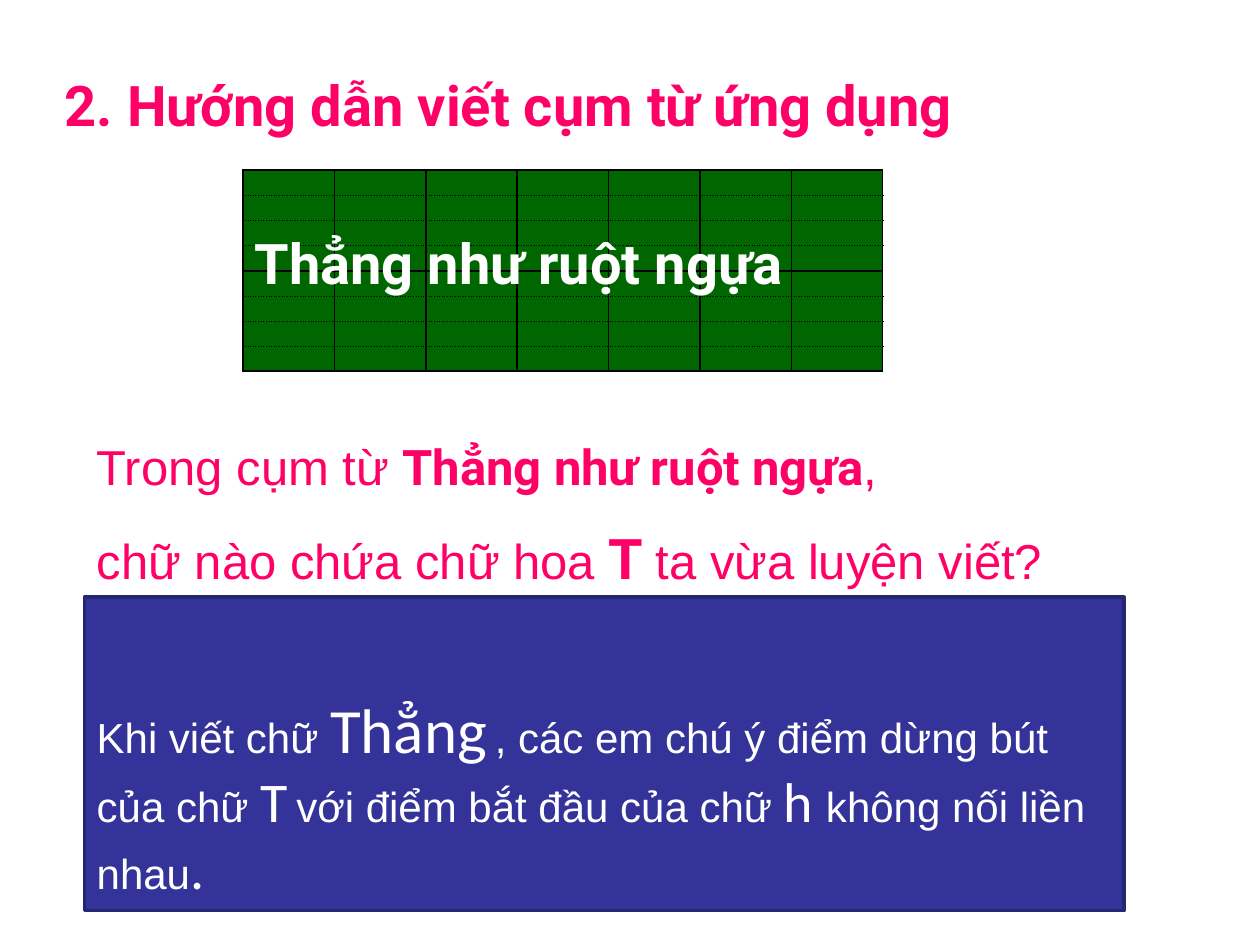
from dataclasses import dataclass

from lxml import etree
from pptx import Presentation
from pptx.dml.color import RGBColor
from pptx.enum.shapes import MSO_SHAPE
from pptx.enum.text import MSO_ANCHOR, PP_ALIGN
from pptx.oxml.ns import qn
from pptx.slide import Slide
from pptx.table import _Cell
from pptx.text.text import TextFrame
from pptx.util import Cm, Length, Pt

SCROLL = MSO_SHAPE.HORIZONTAL_SCROLL
RECTANGLE = MSO_SHAPE.RECTANGLE
TOP, MIDDLE, BOTTOM = MSO_ANCHOR.TOP, MSO_ANCHOR.MIDDLE, MSO_ANCHOR.BOTTOM
LEFT, CENTER = PP_ALIGN.LEFT, PP_ALIGN.CENTER

PINK = RGBColor(0xFF, 0x00, 0x66)
WHITE = RGBColor(0xFF, 0xFF, 0xFF)
BLACK = RGBColor(0x00, 0x00, 0x00)
GREEN = RGBColor(0x00, 0x66, 0x00)
BLUE = RGBColor(0x33, 0x33, 0x99)
NAVY = RGBColor(0x26, 0x26, 0x71)

GRID_ROWS, GRID_COLUMNS, ROWS_PER_BAND = 8, 7, 4
PHRASE = "Thẳng như ruột ngựa"


@dataclass(frozen=True)
class Box:
    left: float
    top: float
    width: float
    height: float

    def lengths(self) -> tuple[Length, ...]:
        return Cm(self.left), Cm(self.top), Cm(self.width), Cm(self.height)


@dataclass(frozen=True)
class Words:
    text: str
    size: float
    font: str = "Arial"
    color: RGBColor = WHITE
    bold: bool = False


@dataclass(frozen=True)
class Edge:
    tag: str
    width: float
    dash: str = "solid"


def write(frame: TextFrame, lines: list[list[Words]], align: PP_ALIGN = LEFT,
          anchor: MSO_ANCHOR = TOP, gap: float = 0, bottom: float = 0.13) -> None:
    layout = {
        "word_wrap": True,
        "vertical_anchor": anchor,
        "margin_left": Cm(0.25),
        "margin_right": Cm(0.25),
        "margin_top": Cm(0.13),
        "margin_bottom": Cm(bottom),
    }
    for key, value in layout.items():
        setattr(frame, key, value)
    for index, line in enumerate(lines):
        paragraph = frame.add_paragraph() if index else frame.paragraphs[0]
        paragraph.alignment = align
        paragraph.space_before = Pt(gap if index else 0)
        for words in line:
            run = paragraph.add_run()
            run.text = words.text
            run.font.color.rgb = words.color
            style = {"size": Pt(words.size), "name": words.font, "bold": words.bold}
            for key, value in style.items():
                setattr(run.font, key, value)


def draw_edge(cell: _Cell, edge: Edge) -> None:
    properties = cell._tc.get_or_add_tcPr()
    line = etree.SubElement(properties, qn(f"a:{edge.tag}"), w=str(Pt(edge.width)))
    fill = etree.SubElement(line, qn("a:solidFill"))
    etree.SubElement(fill, qn("a:srgbClr"), val=str(BLACK))
    etree.SubElement(line, qn("a:prstDash"), val=edge.dash)


def horizontal_edge(tag: str, boundary: int) -> Edge:
    if boundary % ROWS_PER_BAND == 0:
        return Edge(tag, 1.5)
    return Edge(tag, 0.5, "sysDot")


def draw_writing_grid(slide: Slide, box: Box) -> None:
    grid = slide.shapes.add_table(GRID_ROWS, GRID_COLUMNS, *box.lengths()).table
    grid.first_row = grid.horz_banding = False
    for column in grid.columns:
        column.width = Cm(box.width / GRID_COLUMNS)
    for index, row in enumerate(grid.rows):
        row.height = Cm(box.height / GRID_ROWS)
        edges = [
            Edge("lnL", 1),
            Edge("lnR", 1),
            horizontal_edge("lnT", index),
            horizontal_edge("lnB", index + 1),
        ]
        for cell in row.cells:
            for side in ("left", "right", "top", "bottom"):
                setattr(cell, f"margin_{side}", 0)
            for edge in edges:
                draw_edge(cell, edge)
            cell.fill.solid()
            cell.fill.fore_color.rgb = GREEN
            empty = cell.text_frame.paragraphs[0]._p
            etree.SubElement(empty, qn("a:endParaRPr"), sz="800")


def main() -> None:
    presentation = Presentation()
    presentation.slide_width, presentation.slide_height = Cm(25.4), Cm(19.05)
    slide = presentation.slides.add_slide(presentation.slide_layouts[5])

    heading = slide.shapes.title
    heading.left, heading.top, heading.width, heading.height = Box(0, 1.3, 20.52, 1.63).lengths()
    write(heading.text_frame,
          [[Words("2. Hướng dẫn viết cụm từ ứng dụng", 32, "Roboto", PINK, True)]], CENTER)

    draw_writing_grid(slide, Box(4.9, 3.43, 12.9, 4.06))

    phrase = slide.shapes.add_textbox(*Box(4.88, 4.47, 11.81, 1.63).lengths())
    write(phrase.text_frame, [[Words(PHRASE, 32, "Roboto", WHITE, True)]])

    question = slide.shapes.add_shape(SCROLL, *Box(1.07, 7.82, 22.23, 5.08).lengths())
    question.shadow.inherit = False
    question.fill.background()
    question.line.fill.background()
    write(question.text_frame, [
        [Words("Trong cụm từ ", 28, color=PINK),
         Words(PHRASE, 28, "Roboto", PINK, True),
         Words(",", 28, color=PINK)],
        [Words("chữ nào chứa chữ hoa ", 28, color=PINK),
         Words("T ", 32, "Roboto", PINK, True),
         Words("ta vừa luyện viết?", 28, color=PINK)],
    ], anchor=MIDDLE, gap=16)

    advice = slide.shapes.add_shape(RECTANGLE, *Box(1.7, 12.04, 20.96, 6.32).lengths())
    advice.shadow.inherit = False
    advice.fill.solid()
    advice.fill.fore_color.rgb = BLUE
    advice.line.color.rgb = NAVY
    advice.line.width = Pt(2)
    write(advice.text_frame, [[
        Words("Khi viết chữ ", 24),
        Words("Thẳng", 36, "Calibri"),
        Words(" ", 18, "Times New Roman", BLACK),
        Words(", các em chú ý điểm dừng bút của chữ ", 24),
        Words("T", 32, "Calibri"),
        Words(" ", 18),
        Words("với điểm bắt đầu của chữ ", 24),
        Words("h ", 32, "Calibri"),
        Words("không nối liền nhau", 24),
        Words(".", 32, "Calibri"),
    ]], anchor=BOTTOM, bottom=0.2)

    presentation.save("out.pptx")


if __name__ == "__main__":
    main()
